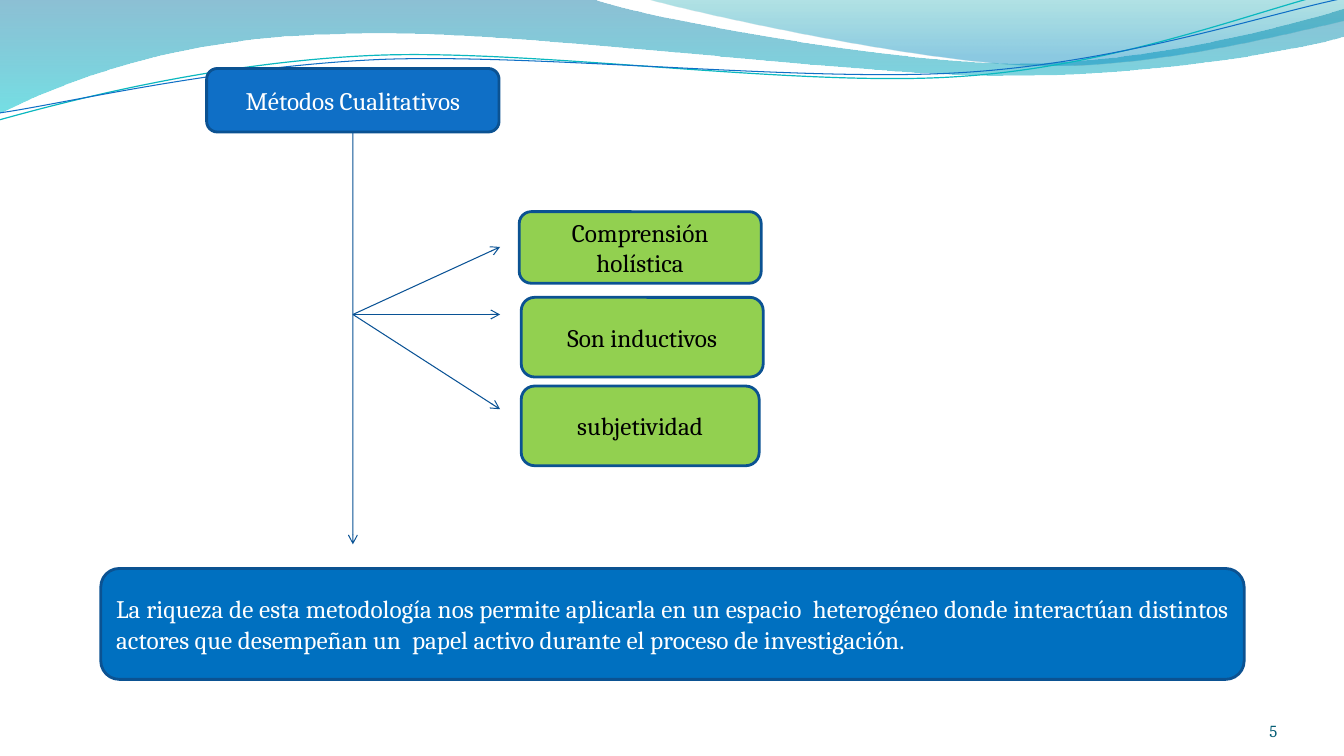
from pptx import Presentation
from pptx import util as u
from pptx.dml.color import RGBColor
from pptx.enum import shapes, text
from pptx.oxml.ns import qn
from lxml import etree

FONT = "Cambria"
EDGE = "0B5292"
ALIGN = text.PP_ALIGN

BANDS = [
    ((0, 0),
     [[(5.87, -0.01)],
      [(6.34, 0.17), (8.85, 0.63), (10.11, 0.63)],
      [(11.38, 0.63), (12.78, 0.26), (13.33, 0.09)],
      [(13.35, 0.36)],
      [(13.11, 0.44), (11.6, 0.76), (9.94, 0.75)],
      [(8.29, 0.75), (5.09, 0.28), (3.43, 0.34)],
      [(1.72, 0.36), (0.61, 0.83), (-0.01, 1.13)]],
     [(0, "0074A1", 45), (1, "00C6CF", 55)]),
    ((6.39, -0.01),
     [[(6.79, 0.11), (9.09, 0.62), (10.25, 0.65)],
      [(11.41, 0.69), (12.82, 0.32), (13.33, 0.21)],
      [(13.33, 0)]],
     [(0, "00A1A9", 30), (0.8, "008BBF", 45)]),
]
WAVES = [
    ((-0.01, 1.19),
     [[(0.64, 1.01), (2.11, 0.62), (3.69, 0.55)],
      [(5.27, 0.48), (7.9, 0.87), (9.5, 0.76)],
      [(11.1, 0.66), (12.52, 0.08), (13.31, -0.1)]],
     "0AB8BF", 0.85),
    ((0, 1.12),
     [[(0.63, 1.03), (2.18, 0.66), (3.78, 0.59)],
      [(5.37, 0.53), (7.96, 0.82), (9.55, 0.72)],
      [(11.15, 0.62), (12.55, 0.14), (13.34, -0.02)]],
     "0F6FC6", 0.75),
]


def color(code):
    """Turn a hex string into a colour."""
    return RGBColor.from_string(code)


def bend(shape, parts):
    """Join each three segments of a curved part into one cubic curve."""
    steps = iter(list(shape._element.spPr.iter(qn("a:lnTo"))))
    for part in parts:
        group = [next(steps) for _ in part]
        if len(group) == 3:
            curve = etree.Element(qn("a:cubicBezTo"))
            group[0].addprevious(curve)
            for step in group:
                curve.append(step[0])
                step.getparent().remove(step)


def outline(slide, start, parts, close):
    """Draw a curved outline without shadow."""
    pen = slide.shapes.build_freeform(*map(u.Inches, start))
    points = [(u.Inches(x), u.Inches(y)) for part in parts for x, y in part]
    pen.add_line_segments(points, close=close)
    shape = pen.convert_to_shape()
    bend(shape, parts)
    shape.shadow.inherit = False
    return shape


def band(slide, start, parts, stops):
    """Draw a translucent band with a vertical gradient."""
    shape = outline(slide, start, parts, True)
    shape.line.fill.background()
    shape.fill.gradient()
    shape.fill.gradient_angle = 270
    for stop, (place, code, _) in zip(shape.fill.gradient_stops, stops):
        stop.position = place
        stop.color.rgb = color(code)
    tints = shape._element.spPr.iter(qn("a:srgbClr"))
    for tint, (_, _, alpha) in zip(list(tints), stops):
        etree.SubElement(tint, qn("a:alpha")).set("val", str(alpha * 1000))


def wave(slide, start, parts, code, width):
    """Draw a thin curved line."""
    shape = outline(slide, start, parts, False)
    shape.fill.background()
    shape.line.color.rgb = color(code)
    shape.line.width = u.Pt(width)


def write(frame, words, size, code, align):
    """Fill a text frame with one styled run."""
    frame.word_wrap = True
    par = frame.paragraphs[0]
    par.alignment = align
    run = par.add_run()
    run.text = words
    run.font.name = FONT
    run.font.size = u.Pt(size)
    run.font.color.rgb = color(code)


def box(slide, area, words, fill, ink="FFFFFF", align=ALIGN.CENTER):
    """Draw a rounded box with text."""
    shape = slide.shapes.add_shape(
        shapes.MSO_SHAPE.ROUNDED_RECTANGLE, *map(u.Inches, area))
    shape.shadow.inherit = False
    shape.fill.solid()
    shape.fill.fore_color.rgb = color(fill)
    shape.line.color.rgb = color(EDGE)
    shape.line.width = u.Pt(2)
    shape.text_frame.vertical_anchor = text.MSO_ANCHOR.MIDDLE
    write(shape.text_frame, words, 18, ink, align)
    return shape


def arrow(slide, start, end):
    """Draw a straight line with an open arrowhead."""
    line = slide.shapes.add_connector(
        shapes.MSO_CONNECTOR.STRAIGHT, *map(u.Inches, start + end))
    line.line.color.rgb = color("095295")
    line.line.width = u.Pt(0.75)
    props = line._element.spPr
    etree.SubElement(props.find(qn("a:ln")), qn("a:tailEnd")).set(
        "type", "arrow")
    etree.SubElement(props, qn("a:effectLst"))
    return line


def number(slide, words):
    """Write the slide number at the lower right."""
    label = slide.shapes.add_textbox(
        *map(u.Inches, (11.56, 6.95, 1.11, 0.4)))
    frame = label.text_frame
    frame.margin_left = frame.margin_right = 0
    frame.margin_top = frame.margin_bottom = 0
    frame.vertical_anchor = text.MSO_ANCHOR.BOTTOM
    write(frame, words, 12, "045D75", ALIGN.RIGHT)


def main():
    """Build the slide and save it."""
    deck = Presentation()
    deck.slide_width, deck.slide_height = u.Inches(13.33), u.Inches(7.5)
    slide = deck.slides.add_slide(deck.slide_layouts[6])
    for item in BANDS:
        band(slide, *item)
    for item in WAVES:
        wave(slide, *item)
    number(slide, "5")
    box(slide, (1, 5.64, 11.34, 1.1),
        "La riqueza de esta metodología nos permite aplicarla en un "
        "espacio  heterogéneo donde interactúan distintos actores que "
        "desempeñan un  papel activo durante el proceso de investigación.",
        "0070C0", align=ALIGN.JUSTIFY)
    title = box(slide, (2.05, 0.68, 2.9, 0.63),
                "Métodos Cualitativos", "0F6FC6")
    traits = [((5.15, 2.1, 2.4, 0.71), "Comprensión holística"),
              ((5.17, 2.95, 2.4, 0.79), "Son inductivos"),
              ((5.17, 3.83, 2.36, 0.79), "subjetividad")]
    for area, words in traits:
        box(slide, area, words, "92D050", "000000")
    trunk = arrow(slide, (3.5, 1.31), (3.5, 5.4))
    trunk.begin_connect(title, 2)
    for y in (2.45, 3.12, 4.06):
        arrow(slide, (3.5, 3.12), (4.96, y))
    deck.save("out.pptx")


if __name__ == "__main__":
    main()
